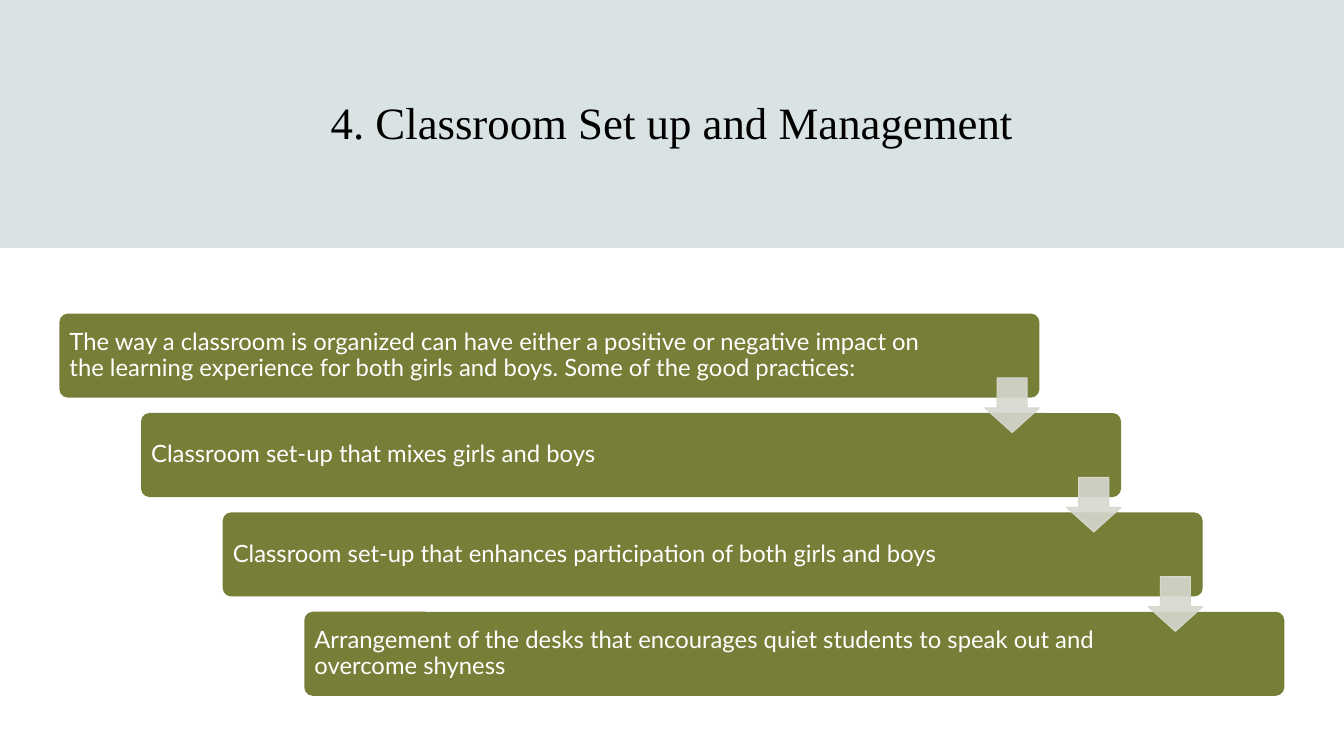
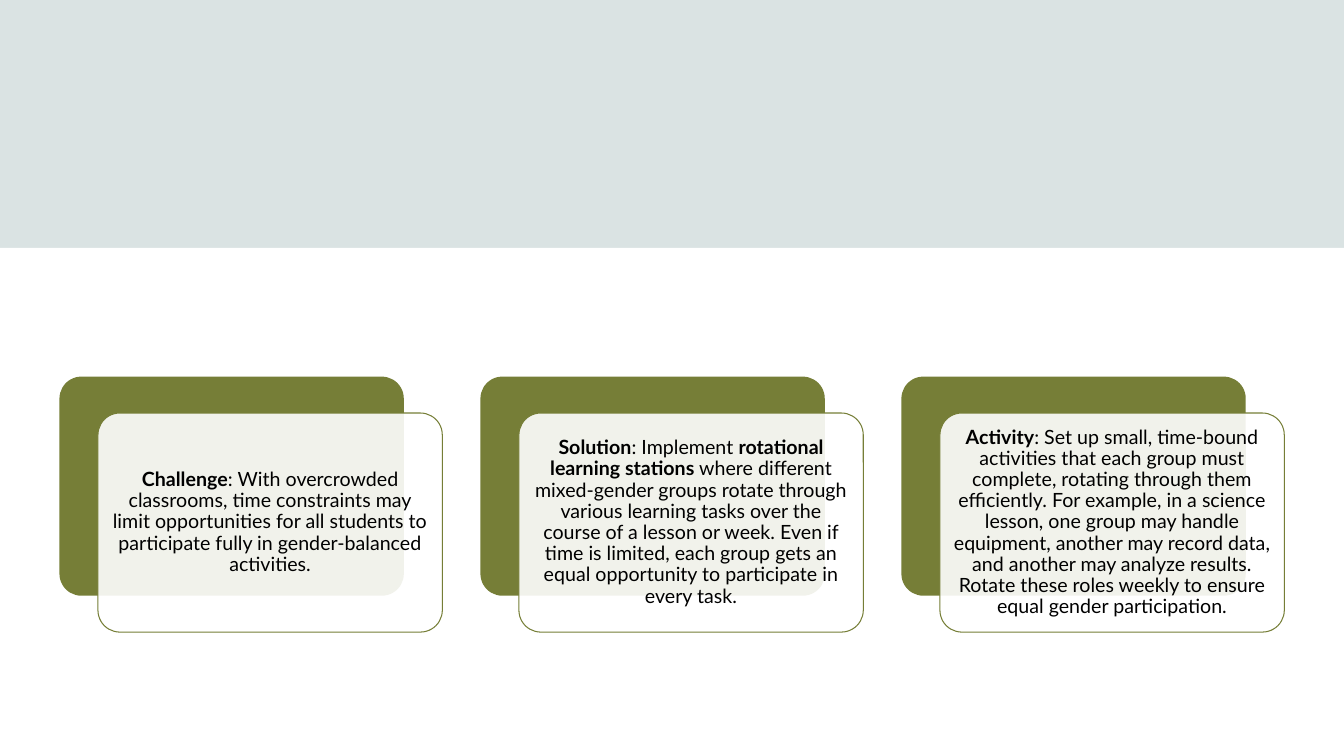
from lxml.etree import SubElement
from pptx import Presentation
from pptx.dml.color import RGBColor
from pptx.enum.shapes import MSO_SHAPE
from pptx.enum.text import MSO_ANCHOR, PP_ALIGN
from pptx.oxml.ns import qn
from pptx.util import Pt

MIST = RGBColor(0xDA, 0xE3, 0xE3)
OLIVE = RGBColor(0x76, 0x7E, 0x37)
STONE = RGBColor(0xD6, 0xD8, 0xCE)
WHITE = RGBColor(0xFF, 0xFF, 0xFF)
BLACK = RGBColor(0, 0, 0)
TITLE_FONT, BODY_FONT = "Times New Roman", "Lato"
W, H = 960, 540
BAND_H = 177
MARGIN = 42.5


def add_text(sp, text, size, color, font=BODY_FONT, align=PP_ALIGN.LEFT,
             spacing=0.9, insets=(7.2, 3.6, 7.2, 3.6)):
    """Write text into a shape; parts between ** marks are bold."""
    tf = sp.text_frame
    tf.word_wrap = True
    tf.vertical_anchor = MSO_ANCHOR.MIDDLE
    tf.margin_left, tf.margin_top, tf.margin_right, tf.margin_bottom = map(Pt, insets)
    p = tf.paragraphs[0]
    p.alignment = align
    p.line_spacing = spacing
    for i, part in enumerate(text.split("**")):
        if part:
            r = p.add_run()
            r.text = part
            r.font.size, r.font.name = Pt(size), font
            r.font.color.rgb = color
            r.font.bold = i % 2 == 1


def add_box(s, kind, x, y, w, h, fill, line=None, alpha=None, adj=()):
    sp = s.shapes.add_shape(kind, Pt(x), Pt(y), Pt(w), Pt(h))
    sp.shadow.inherit = False
    sp.fill.solid()
    sp.fill.fore_color.rgb = fill
    if line is None:
        sp.line.fill.background()
    else:
        sp.line.color.rgb = line
        sp.line.width = Pt(0.75)
    for i, value in enumerate(adj):
        sp.adjustments[i] = value
    if alpha is not None:
        clr = sp.fill._xPr.find(qn("a:solidFill")).find(qn("a:srgbClr"))
        SubElement(clr, qn("a:alpha")).set("val", str(alpha * 1000))
    return sp


prs = Presentation()
prs.slide_width, prs.slide_height = Pt(W), Pt(H)

# Shared look: tinted band above a white body
slides = []
for _ in range(2):
    s = prs.slides.add_slide(prs.slide_layouts[6])
    s.background.fill.solid()
    s.background.fill.fore_color.rgb = MIST
    add_box(s, MSO_SHAPE.RECTANGLE, 0, BAND_H, W, H - BAND_H, WHITE)
    slides.append(s)

# Slide 1: title
s = slides[0]
title = s.shapes.add_textbox(Pt(85), Pt(42.5), Pt(790), Pt(88.5))
add_text(title, "4. Classroom Set up and Management", 32, BLACK,
         font=TITLE_FONT, align=PP_ALIGN.CENTER, spacing=1.0)

# Slide 1: staircase of steps, each with its right inset
steps = [
    ("The way a classroom is organized can have either a positive or negative impact on "
     "the learning experience for both girls and boys. Some of the good practices:", 71),
    ("Classroom set-up that mixes girls and boys", 102),
    ("Classroom set-up that enhances participation of both girls and boys", 102),
    ("Arrangement of the desks that encourages quiet students to speak out and "
     "overcome shyness", 102),
]
STEP_W, STEP_H = 700, 60
STEP_DX, STEP_DY = 58.3, 71
STEP_TOP = 224
ARROW = 39
for i, (text, right) in enumerate(steps):
    sp = add_box(s, MSO_SHAPE.ROUNDED_RECTANGLE, MARGIN + i * STEP_DX,
                 STEP_TOP + i * STEP_DY, STEP_W, STEP_H, OLIVE, adj=(0.1,))
    add_text(sp, text, 17, WHITE, insets=(5.4, 3.6, right, 3.6))

# Slide 1: arrows between the steps
for i in range(len(steps) - 1):
    add_box(s, MSO_SHAPE.DOWN_ARROW, MARGIN + STEP_W - ARROW + i * STEP_DX,
            STEP_TOP + 46 + i * STEP_DY, ARROW, ARROW, STONE,
            line=STONE, alpha=90, adj=(0.55, 0.45))

# Slide 2: three layered cards
s = slides[1]
cards = [
    "**Challenge**: With overcrowded classrooms, time constraints may limit opportunities "
    "for all students to participate fully in gender-balanced activities.",
    "**Solution**: Implement **rotational learning stations** where different mixed-gender "
    "groups rotate through various learning tasks over the course of a lesson or week. "
    "Even if time is limited, each group gets an equal opportunity to participate in "
    "every task.",
    "**Activity**: Set up small, time-bound activities that each group must complete, "
    "rotating through them efficiently. For example, in a science lesson, one group may "
    "handle equipment, another may record data, and another may analyze results. Rotate "
    "these roles weekly to ensure equal gender participation.",
]
CARD_W, CARD_H = 246, 156.5
CARD_TOP, CARD_PITCH = 269, 300.7
OFFSET_X, OFFSET_Y = 27.5, 26
for i, text in enumerate(cards):
    x = MARGIN + i * CARD_PITCH
    add_box(s, MSO_SHAPE.ROUNDED_RECTANGLE, x, CARD_TOP, CARD_W, CARD_H, OLIVE, adj=(0.1,))
    sp = add_box(s, MSO_SHAPE.ROUNDED_RECTANGLE, x + OFFSET_X, CARD_TOP + OFFSET_Y,
                 CARD_W, CARD_H, WHITE, line=OLIVE, alpha=90, adj=(0.1,))
    add_text(sp, text, 14, BLACK, align=PP_ALIGN.CENTER, insets=(4.8,) * 4)

prs.save("out.pptx")
